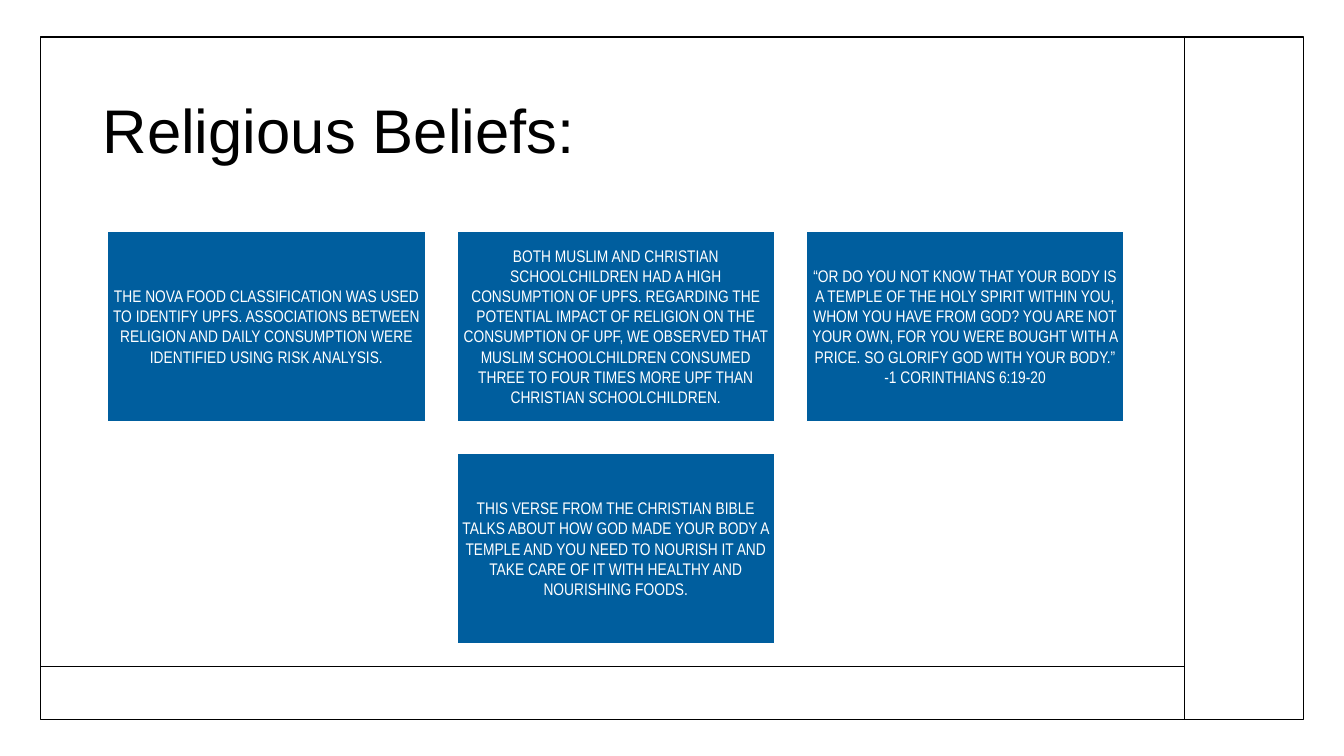
from dataclasses import dataclass

import pptx
import pptx.dml.color
import pptx.enum.shapes
import pptx.enum.text
import pptx.oxml
import pptx.util
from pptx.util import Pt

RGB = pptx.dml.color.RGBColor
ANCHOR = pptx.enum.text.MSO_ANCHOR
ALIGN = pptx.enum.text.PP_ALIGN
RECTANGLE = pptx.enum.shapes.MSO_SHAPE.RECTANGLE
STRAIGHT = pptx.enum.shapes.MSO_CONNECTOR.STRAIGHT
NO_EFFECTS = '<a:effectLst xmlns:a="http://schemas.openxmlformats.org/drawingml/2006/main"/>'


@dataclass(frozen=True)
class Theme:
    ink: RGB = RGB(0, 0, 0)
    paper: RGB = RGB(255, 255, 255)
    card: RGB = RGB(0x00, 0x5E, 0x9E)
    title_font: str = "Arial"
    title_size: int = 44
    card_font: str = "Arial Narrow"
    card_size: int = 12
    line_width: int = 1


THEME = Theme()

FRAME_LEFT, FRAME_TOP, FRAME_WIDTH, FRAME_HEIGHT = 28.8, 26.6, 902.2, 487.4
SIDEBAR_X, FOOTER_Y = 846, 476

CARD_LEFT, CARD_TOP = 77, 165
CARD_WIDTH, CARD_HEIGHT, CARD_GAP = 226.8, 136, 22.7
COLUMN_STEP = CARD_WIDTH + CARD_GAP
ROW_STEP = CARD_HEIGHT + CARD_GAP

# Column, row and statement of each card
CARDS = [
    (0, 0, "THE NOVA FOOD CLASSIFICATION WAS USED TO IDENTIFY UPFS. ASSOCIATIONS "
           "BETWEEN RELIGION AND DAILY CONSUMPTION WERE IDENTIFIED USING RISK ANALYSIS."),
    (1, 0, "BOTH MUSLIM AND CHRISTIAN SCHOOLCHILDREN HAD A HIGH CONSUMPTION OF UPFS. "
           "REGARDING THE POTENTIAL IMPACT OF RELIGION ON THE CONSUMPTION OF UPF, WE "
           "OBSERVED THAT MUSLIM SCHOOLCHILDREN CONSUMED THREE TO FOUR TIMES MORE UPF "
           "THAN CHRISTIAN SCHOOLCHILDREN."),
    (2, 0, "“OR DO YOU NOT KNOW THAT YOUR BODY IS A TEMPLE OF THE HOLY SPIRIT WITHIN "
           "YOU, WHOM YOU HAVE FROM GOD? YOU ARE NOT YOUR OWN, FOR YOU WERE BOUGHT "
           "WITH A PRICE. SO GLORIFY GOD WITH YOUR BODY.” -1 CORINTHIANS 6:19-20"),
    (1, 1, "THIS VERSE FROM THE CHRISTIAN BIBLE TALKS ABOUT HOW GOD MADE YOUR BODY A "
           "TEMPLE AND YOU NEED TO NOURISH IT AND TAKE CARE OF IT WITH HEALTHY AND "
           "NOURISHING FOODS."),
]


def style_line(line, color):
    line.color.rgb = color
    line.width = Pt(THEME.line_width)


def write(frame, text, font, size, color):
    """Fill a wrapped, vertically centred frame and return its paragraph."""
    frame.word_wrap = True
    frame.vertical_anchor = ANCHOR.MIDDLE
    frame.text = text
    paragraph = frame.paragraphs[0]
    run_font = paragraph.runs[0].font
    run_font.name = font
    run_font.size = Pt(size)
    run_font.color.rgb = color
    return paragraph


def add_rectangle(slide, left, top, width, height, outline):
    rectangle = slide.shapes.add_shape(RECTANGLE, Pt(left), Pt(top), Pt(width), Pt(height))
    rectangle.shadow.inherit = False
    style_line(rectangle.line, outline)
    return rectangle


def add_rule(slide, x1, y1, x2, y2):
    rule = slide.shapes.add_connector(STRAIGHT, Pt(x1), Pt(y1), Pt(x2), Pt(y2))
    style_line(rule.line, THEME.ink)
    rule._element.spPr.append(pptx.oxml.parse_xml(NO_EFFECTS))


def add_page_frame(slide):
    border = add_rectangle(slide, FRAME_LEFT, FRAME_TOP, FRAME_WIDTH, FRAME_HEIGHT, THEME.ink)
    border.fill.background()
    add_rule(slide, SIDEBAR_X, FRAME_TOP, SIDEBAR_X, FRAME_TOP + FRAME_HEIGHT)
    add_rule(slide, FRAME_LEFT, FOOTER_Y, SIDEBAR_X, FOOTER_Y)


def add_title(slide, text):
    title = slide.shapes.add_textbox(Pt(66.2), Pt(43.2), Pt(747.4), Pt(104.4))
    heading = write(title.text_frame, text, THEME.title_font, THEME.title_size, THEME.ink)
    heading.line_spacing = 0.9


def add_card(slide, column, row, statement):
    card = add_rectangle(slide, CARD_LEFT + column * COLUMN_STEP, CARD_TOP + row * ROW_STEP,
                         CARD_WIDTH, CARD_HEIGHT, THEME.paper)
    card.fill.solid()
    card.fill.fore_color.rgb = THEME.card
    frame = card.text_frame
    frame.margin_left = frame.margin_right = Pt(3.6)
    frame.margin_top = frame.margin_bottom = Pt(3.6)
    paragraph = write(frame, statement, THEME.card_font, THEME.card_size, THEME.paper)
    paragraph.alignment = ALIGN.CENTER


def main():
    deck = pptx.Presentation()
    deck.slide_width, deck.slide_height = Pt(960), Pt(540)
    slide = deck.slides.add_slide(deck.slide_layouts[6])
    add_page_frame(slide)
    add_title(slide, "Religious Beliefs:")
    for column, row, statement in CARDS:
        add_card(slide, column, row, statement)
    deck.save("out.pptx")


if __name__ == "__main__":
    main()
